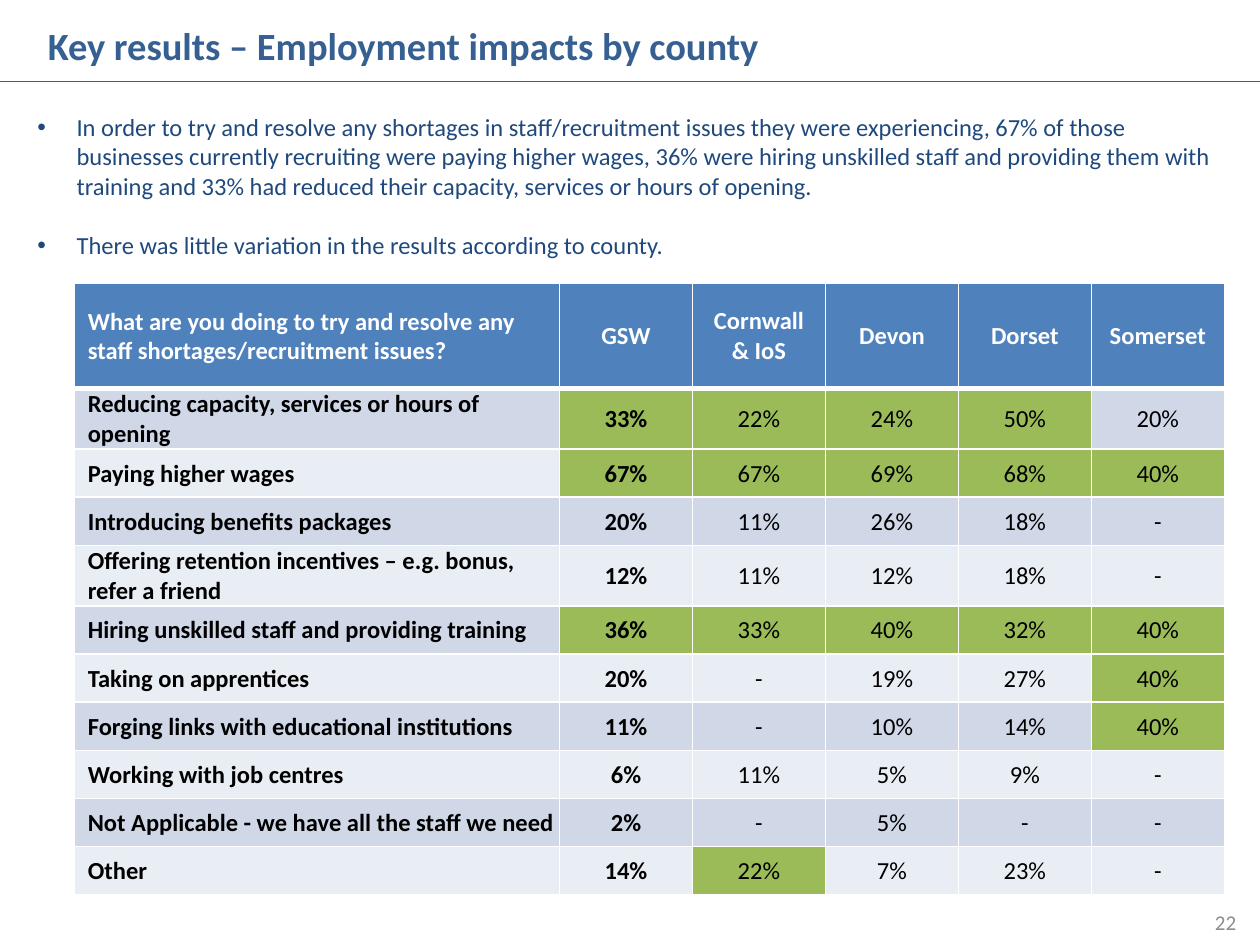
import pptx
import pptx.dml.color
import pptx.enum.shapes
import pptx.enum.text
import pptx.oxml
import pptx.oxml.ns
import pptx.util
from pptx.util import Cm

RGBColor = pptx.dml.color.RGBColor
ALIGN = pptx.enum.text.PP_ALIGN
ANCHOR = pptx.enum.text.MSO_ANCHOR
WHITE = RGBColor(0xFF, 0xFF, 0xFF)
BLACK = RGBColor(0x00, 0x00, 0x00)
TITLE_BLUE = RGBColor(0x37, 0x60, 0x92)
TEXT_BLUE = RGBColor(0x1F, 0x49, 0x7D)
HEADER_BLUE = RGBColor(0x4F, 0x81, 0xBD)
BAND_DARK = RGBColor(0xD0, 0xD8, 0xE8)
BAND_LIGHT = RGBColor(0xE9, 0xED, 0xF4)
HIGHLIGHT = RGBColor(0x9B, 0xBB, 0x59)
NUMBER_GREY = RGBColor(0x8C, 0x8C, 0x8C)

TITLE = "Key results – Employment impacts by county"
FINDINGS = [
    "In order to try and resolve any shortages in staff/recruitment issues they were "
    "experiencing, 67% of those businesses currently recruiting were paying higher wages, "
    "36% were hiring unskilled staff and providing them with training and 33% had reduced "
    "their capacity, services or hours of opening.",
    "There was little variation in the results according to county.",
]
HEADINGS = [
    "What are you doing to try and resolve any staff shortages/recruitment issues?",
    "GSW", "Cornwall & IoS", "Devon", "Dorset", "Somerset",
]
ACTIONS = [
    ("Reducing capacity, services or hours of opening", "33% 22% 24% 50% 20%", {1, 2, 3, 4}),
    ("Paying higher wages", "67% 67% 69% 68% 40%", {1, 2, 3, 4, 5}),
    ("Introducing benefits packages", "20% 11% 26% 18% -", set()),
    ("Offering retention incentives – e.g. bonus, refer a friend", "12% 11% 12% 18% -", set()),
    ("Hiring unskilled staff and providing training", "36% 33% 40% 32% 40%", {1, 2, 3, 4, 5}),
    ("Taking on apprentices", "20% - 19% 27% 40%", {5}),
    ("Forging links with educational institutions", "11% - 10% 14% 40%", {5}),
    ("Working with job centres", "6% 11% 5% 9% -", set()),
    ("Not Applicable - we have all the staff we need", "2% - 5% - -", set()),
    ("Other", "14% 22% 7% 23% -", {2}),
]
TALL_ROWS = {0: Cm(2.11), 1: Cm(1.2), 4: Cm(1.2)}
ROW_HEIGHT = Cm(0.97)
LABEL_WIDTH = Cm(9.78)
VALUE_WIDTH = Cm(2.68)


def apply_format(target, values):
    for name, value in values.items():
        setattr(target, name, value)


def write_text(para, text, size, color, bold=False):
    span = para.add_run()
    span.text = text
    apply_format(span.font, {"name": "Calibri", "size": pptx.util.Pt(size), "bold": bold})
    span.font.color.rgb = color


def place(box, left, top, width, height):
    apply_format(box, {"left": left, "top": top, "width": width, "height": height})


def set_indent(para, margin, first_line):
    props = para._p.get_or_add_pPr()
    props.set("marL", str(margin))
    props.set("indent", str(first_line))


def fill_title(box):
    place(box, Cm(0.71), Cm(0.13), Cm(15), Cm(1.4))
    frame = box.text_frame
    apply_format(frame, {"vertical_anchor": ANCHOR.TOP, "word_wrap": False,
                         "auto_size": pptx.enum.text.MSO_AUTO_SIZE.NONE})
    para = frame.paragraphs[0]
    apply_format(para, {"alignment": ALIGN.LEFT, "line_spacing": 1.2})
    write_text(para, TITLE, 22, TITLE_BLUE, True)


def fill_findings(box):
    place(box, Cm(0.5), Cm(2.13), Cm(24.2), Cm(3.84))
    frame = box.text_frame
    frame.auto_size = pptx.enum.text.MSO_AUTO_SIZE.NONE
    for index, finding in enumerate(FINDINGS):
        para = frame.add_paragraph() if index else frame.paragraphs[0]
        para.space_before = pptx.util.Pt(17 * index)
        set_indent(para, Cm(0.79), -Cm(0.79))
        write_text(para, finding, 14, TEXT_BLUE)


def add_rule(page):
    rule = page.shapes.add_connector(
        pptx.enum.shapes.MSO_CONNECTOR.STRAIGHT, 0, Cm(1.65), Cm(25.4), Cm(1.65))
    rule.line.color.rgb = TITLE_BLUE
    rule.line.width = pptx.util.Pt(0.75)
    rule._element.spPr.append(pptx.oxml.parse_xml(
        f"<a:effectLst {pptx.oxml.ns.nsdecls('a')}/>"))


def add_borders(cell, widths):
    props = cell._tc.get_or_add_tcPr()
    for side, width in widths.items():
        props.append(pptx.oxml.parse_xml(
            f'<a:ln{side} {pptx.oxml.ns.nsdecls("a")} w="{pptx.util.Pt(width)}">'
            f'<a:solidFill><a:srgbClr val="{WHITE}"/></a:solidFill></a:ln{side}>'))


def fill_cell(cell, text, row, column, fill):
    header = row == 0
    add_borders(cell, {"L": 1, "R": 1, "T": 3 if row == 1 else 1, "B": 3 if header else 1})
    cell.fill.solid()
    cell.fill.fore_color.rgb = fill
    cell.vertical_anchor = ANCHOR.MIDDLE
    if not header or column == 0:
        apply_format(cell, {"margin_left": Cm(0.02), "margin_right": Cm(0.02),
                            "margin_top": Cm(0.02), "margin_bottom": 0})
    para = cell.text_frame.paragraphs[0]
    if column == 0:
        set_indent(para, Cm(0.25), 0)
    else:
        para.alignment = ALIGN.CENTER
    write_text(para, text, 14, WHITE if header else BLACK, header or column < 2)


def add_results(page):
    total = LABEL_WIDTH + VALUE_WIDTH * (len(HEADINGS) - 1)
    table = page.shapes.add_table(
        len(ACTIONS) + 1, len(HEADINGS), Cm(1.5), Cm(5.72), total, Cm(12.27)).table
    for index, column in enumerate(table.columns):
        column.width = VALUE_WIDTH if index else LABEL_WIDTH
    for index, row in enumerate(table.rows):
        row.height = TALL_ROWS.get(index, ROW_HEIGHT)
    for column, heading in enumerate(HEADINGS):
        fill_cell(table.cell(0, column), heading, 0, column, HEADER_BLUE)
    for row, (action, shares, highlighted) in enumerate(ACTIONS, 1):
        band = BAND_DARK if row % 2 else BAND_LIGHT
        for column, text in enumerate([action, *shares.split()]):
            fill = HIGHLIGHT if column in highlighted else band
            fill_cell(table.cell(row, column), text, row, column, fill)


def add_page_number(page):
    box = page.shapes.add_textbox(Cm(19.25), Cm(18.08), Cm(5.92), Cm(1.02))
    apply_format(box.text_frame, {"word_wrap": True, "vertical_anchor": ANCHOR.MIDDLE})
    para = box.text_frame.paragraphs[0]
    para.alignment = ALIGN.RIGHT
    write_text(para, "22", 12, NUMBER_GREY)


def main():
    deck = pptx.Presentation()
    apply_format(deck, {"slide_width": Cm(25.4), "slide_height": Cm(19.05)})
    page = deck.slides.add_slide(deck.slide_layouts[1])
    add_rule(page)
    add_results(page)
    fill_title(page.shapes.title)
    fill_findings(page.placeholders[1])
    add_page_number(page)
    deck.save("out.pptx")


if __name__ == "__main__":
    main()
